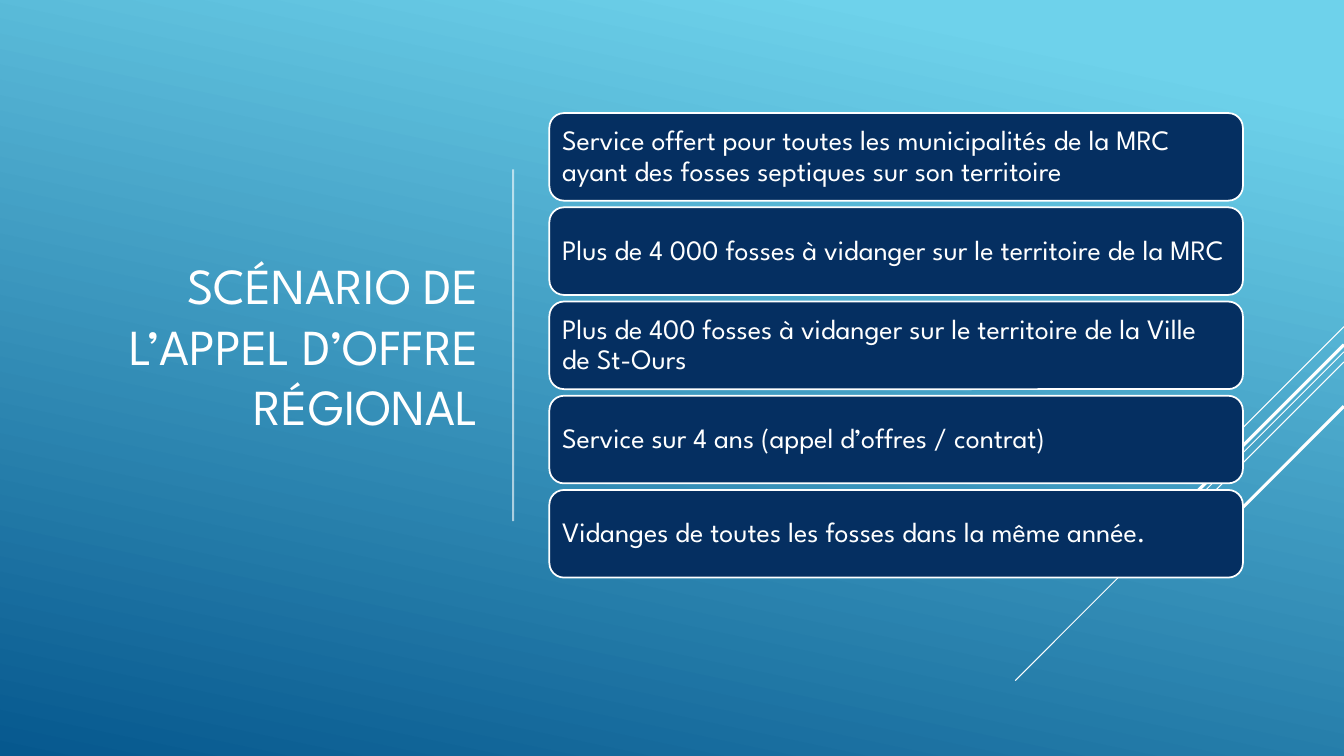
from pptx import Presentation
from pptx.dml.color import RGBColor
from pptx.enum.shapes import MSO_CONNECTOR as Connector, MSO_SHAPE as Shape
from pptx.enum.text import MSO_ANCHOR as Anchor, MSO_AUTO_SIZE as AutoSize, PP_ALIGN as Align
from pptx.oxml.ns import qn
from pptx.util import Pt
from lxml.etree import SubElement

# Content
TITLE = "SCÉNARIO DE L’APPEL D’OFFRE RÉGIONAL"
CARDS = [
    "Service offert pour toutes les municipalités de la MRC ayant des fosses septiques sur son territoire",
    "Plus de 4 000 fosses à vidanger sur le territoire de la MRC",
    "Plus de 400 fosses à vidanger sur le territoire de la Ville de St-Ours",
    "Service sur 4 ans (appel d’offres / contrat)",
    "Vidanges de toutes les fosses dans la même année.",
]
# Diagonals at 45 degrees: height at the right edge, horizontal run, line width
DIAGONALS = [
    (233.3, 72, 0.75),
    (251.3, 234.8, 0.75),
    (258.5, 149.2, 0.75),
    (246.2, 137.5, 2.25),
    (290.2, 100.1, 2.25),
]
BACKGROUND = [(0.1, "6ED2EB"), (1, "06588E")]
WHITE, NAVY = "FFFFFF", "052F61"
FONT = "League Spartan"

# Lengths in points
PAGE_WIDTH, PAGE_HEIGHT = 960, 540
CARD_LEFT, CARD_TOP, CARD_WIDTH, CARD_HEIGHT = 392.4, 80.8, 495.4, 62.6
CARD_STEP = 67.3


def color(value):
    return RGBColor.from_string(value)


def add_line(page, x1, y1, x2, y2, width):
    line = page.shapes.add_connector(Connector.STRAIGHT, Pt(x1), Pt(y1), Pt(x2), Pt(y2))
    line.line.color.rgb = color(WHITE)
    line.line.width = Pt(width)
    SubElement(line._element.spPr, qn("a:effectLst"))
    return line


def write(frame, text, size, align, spacing):
    frame.text = text
    frame.word_wrap = True
    frame.auto_size = AutoSize.NONE
    frame.vertical_anchor = Anchor.MIDDLE
    para = frame.paragraphs[0]
    para.alignment = align
    para.line_spacing = spacing
    para.font.name = FONT
    para.font.size = Pt(size)
    para.font.color.rgb = color(WHITE)


deck = Presentation()
deck.slide_width, deck.slide_height = Pt(PAGE_WIDTH), Pt(PAGE_HEIGHT)
page = deck.slides.add_slide(deck.slide_layouts[5])

# Background gradient
fill = page.background.fill
fill.gradient()
fill.gradient_angle = 360 - 102
for stop, (position, value) in zip(fill.gradient_stops, BACKGROUND):
    stop.position = position
    stop.color.rgb = color(value)

# Diagonal lines at the right edge
for top, run, width in DIAGONALS:
    add_line(page, PAGE_WIDTH, top, PAGE_WIDTH - run, top + run, width)

# Title
title = page.shapes.title
title.left, title.top, title.width, title.height = Pt(54), Pt(54), Pt(295.2), Pt(385.2)
write(title.text_frame, TITLE, 36, Align.RIGHT, 1.0)

# Divider, 60 % opaque
divider = add_line(page, 366.5, 121, 366.5, 372.2, 1.5)
tint = divider.line._ln.find(".//" + qn("a:srgbClr"))
SubElement(tint, qn("a:alpha")).set("val", "60000")

# Cards
for index, text in enumerate(CARDS):
    card = page.shapes.add_shape(
        Shape.ROUNDED_RECTANGLE, Pt(CARD_LEFT), Pt(CARD_TOP + index * CARD_STEP),
        Pt(CARD_WIDTH), Pt(CARD_HEIGHT))
    card.shadow.inherit = False
    card.fill.solid()
    card.fill.fore_color.rgb = color(NAVY)
    card.line.color.rgb = color(WHITE)
    card.line.width = Pt(1.25)
    frame = card.text_frame
    # The preset's text area is already inset by about 3 pt
    frame.margin_left = frame.margin_right = Pt(6)
    frame.margin_top = frame.margin_bottom = Pt(6)
    write(frame, text, 20, Align.LEFT, 0.9)

deck.save("out.pptx")
